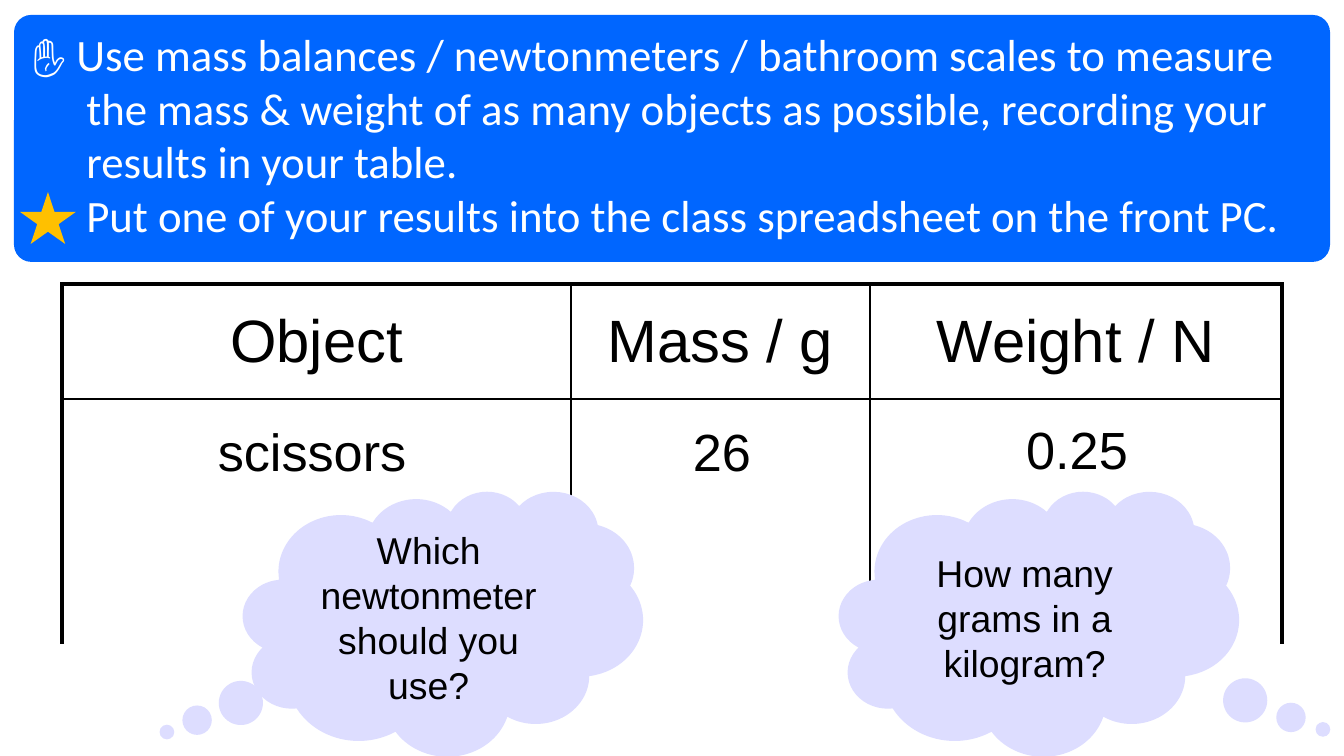
from dataclasses import dataclass

from lxml import etree
from pptx import Presentation
from pptx import util as u
from pptx.dml.color import RGBColor
from pptx.enum import shapes, text
from pptx.oxml.ns import qn

EMU_PER_PX = 9144000 / 1344


@dataclass(frozen=True)
class Theme:
    blue: str = "0066FF"
    lilac: str = "DDDDFF"
    gold: str = "FFC000"
    black: str = "000000"
    white: str = "FFFFFF"
    task_font: str = "Calibri"
    body_font: str = "Arial"
    heading: int = 32
    value: int = 28
    task: int = 24
    question: int = 20
    thick: float = 2.25
    thin: float = 1


THEME = Theme()


def px(length):
    return u.Emu(round(length * EMU_PER_PX))


def write(frame, *paragraphs, size, font=THEME.body_font, color=THEME.black,
          align=text.PP_ALIGN.CENTER, anchor=None, hanging=0):
    """Fill a text frame with equally formatted paragraphs."""
    frame.word_wrap = True
    if anchor is not None:
        frame.vertical_anchor = anchor
    for number, words in enumerate(paragraphs):
        paragraph = frame.add_paragraph() if number else frame.paragraphs[0]
        paragraph.alignment = align
        if hanging:
            properties = paragraph._p.get_or_add_pPr()
            properties.set("marL", str(px(hanging)))
            properties.set("indent", str(-px(hanging)))
        run = paragraph.add_run()
        run.text = words
        run.font.size = u.Pt(size)
        run.font.name = font
        run.font.color.rgb = RGBColor.from_string(color)


def add_filled(slide, kind, box, fill, adjustments=()):
    shape = slide.shapes.add_shape(kind, *map(px, box))
    shape.shadow.inherit = False
    shape.fill.solid()
    shape.fill.fore_color.rgb = RGBColor.from_string(fill)
    shape.line.fill.background()
    for index, value in enumerate(adjustments):
        shape.adjustments[index] = value
    return shape


def set_borders(cell, widths):
    """Draw the left, right, top and bottom lines; a width of 0 hides one."""
    properties = cell._tc.get_or_add_tcPr()
    for position, (side, width) in enumerate(zip("LRTB", widths)):
        line = etree.Element(qn(f"a:ln{side}"), w=str(u.Pt(width)))
        if width:
            fill = etree.SubElement(line, qn("a:solidFill"))
            etree.SubElement(fill, qn("a:srgbClr"), val=THEME.black)
        else:
            etree.SubElement(line, qn("a:noFill"))
        properties.insert(position, line)


def add_results_table(slide, left, top, columns, rows, headings):
    box = left, top, sum(columns), sum(rows)
    table = slide.shapes.add_table(len(rows), len(columns), *map(px, box)).table
    table.first_row = table.horz_banding = False
    for column, width in zip(table.columns, columns):
        column.width = px(width)
    for row, height in zip(table.rows, rows):
        row.height = px(height)

    last = len(columns) - 1
    for r in range(len(rows)):
        for c in range(len(columns)):
            cell = table.cell(r, c)
            cell.fill.background()
            set_borders(cell, (
                THEME.thin if c else THEME.thick,
                THEME.thick if c == last else THEME.thin,
                THEME.thin if r else THEME.thick,
                0 if r else THEME.thin,
            ))
    for c, heading in enumerate(headings):
        cell = table.cell(0, c)
        cell.vertical_anchor = text.MSO_ANCHOR.MIDDLE
        write(cell.text_frame, heading, size=THEME.heading)


def add_value(slide, left, top, value):
    box = slide.shapes.add_textbox(*map(px, (left, top, 262, 77)))
    write(box.text_frame, value, size=THEME.value)


def add_thought(slide, left, tail, question):
    cloud = add_filled(slide, shapes.MSO_SHAPE.CLOUD_CALLOUT,
                       (left, 491, 400, 265), THEME.lilac, tail)
    write(cloud.text_frame, question, size=THEME.question,
          anchor=text.MSO_ANCHOR.MIDDLE)


def main():
    deck = Presentation()
    deck.slide_width, deck.slide_height = px(1344), px(756)
    slide = deck.slides.add_slide(deck.slide_layouts[6])

    # Task panel
    panel = add_filled(slide, shapes.MSO_SHAPE.ROUNDED_RECTANGLE,
                       (14, 15, 1316, 247), THEME.blue, [0.07])
    write(panel.text_frame,
          "✋ Use mass balances / newtonmeters / bathroom scales to measure "
          "the mass & weight of as many objects as possible, recording your "
          "results in your table.",
          "\tPut one of your results into the class spreadsheet on the front PC.",
          size=THEME.task, font=THEME.task_font, color=THEME.white,
          align=text.PP_ALIGN.LEFT, anchor=text.MSO_ANCHOR.TOP, hanging=54)

    # Results table with one example
    add_results_table(slide, 62, 284, (509, 299, 412), (115, 245),
                      ("Object", "Mass / g", "Weight / N"))
    for left, top, value in ((181, 413, "scissors"), (591, 413, "26"),
                             (946, 411, "0.25")):
        add_value(slide, left, top, value)

    # Questions to think about
    add_thought(slide, 243, (-0.69, 0.41), "Which newtonmeter should you use?")
    add_thought(slide, 839, (0.71, 0.4), "How many grams in a kilogram?")

    # Star marking the extra task
    add_filled(slide, shapes.MSO_SHAPE.STAR_5_POINT, (20, 192, 56, 52), THEME.gold)

    deck.save("out.pptx")


if __name__ == "__main__":
    main()
